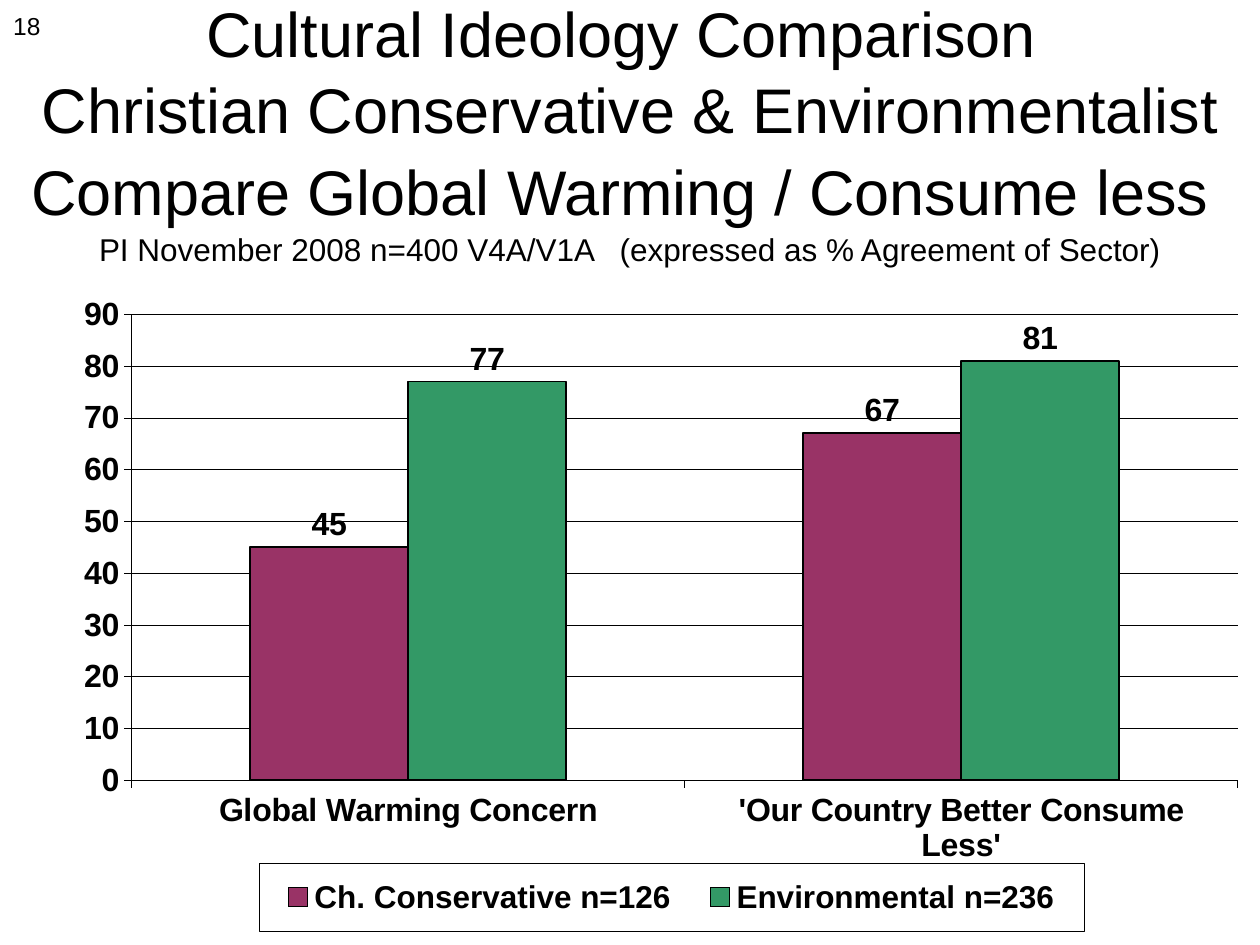
from copy import deepcopy

from lxml import etree
from pptx import Presentation
from pptx.chart.data import CategoryChartData
from pptx.dml.color import RGBColor
from pptx.enum.chart import XL_CHART_TYPE, XL_LABEL_POSITION, XL_LEGEND_POSITION, XL_TICK_MARK
from pptx.enum.text import MSO_ANCHOR, MSO_AUTO_SIZE, PP_ALIGN
from pptx.oxml.ns import qn
from pptx.util import Inches, Pt

CENTER, RIGHT = PP_ALIGN.CENTER, PP_ALIGN.RIGHT
MIDDLE = MSO_ANCHOR.MIDDLE
OUTSIDE = XL_TICK_MARK.OUTSIDE
FONT = "Arial"
COLORS = {"black": "000000", "conservative": "993366", "environmental": "339966"}


def style(font, size, bold=False):
    font.name = FONT
    font.size = Pt(size)
    font.bold = bold
    font.color.rgb = RGBColor.from_string(COLORS["black"])


def set_layout(parent, after, box, inner=False):
    """Place a chart part by fractions of the chart's size."""
    for old in parent.findall(qn("c:layout")):
        parent.remove(old)
    layout = etree.Element(qn("c:layout"))
    manual = etree.SubElement(layout, qn("c:manualLayout"))
    settings = [("layoutTarget", "inner")] if inner else []
    settings += [("xMode", "edge"), ("yMode", "edge"), *zip("xywh", box)]
    for tag, val in settings:
        etree.SubElement(manual, qn(f"c:{tag}")).set("val", str(val))
    if after is None:
        parent.insert(0, layout)
    else:
        after.addnext(layout)


prs = Presentation()
prs.slide_width, prs.slide_height = Inches(10), Inches(7.5)
s = prs.slides.add_slide(prs.slide_layouts[5])

# Title: three large lines and a small source line
sp = s.shapes.title
sp.left, sp.top, sp.width, sp.height = Inches(0), Inches(0), Inches(10), Inches(2.08)
tf = sp.text_frame
tf.word_wrap = True
tf.auto_size = MSO_AUTO_SIZE.NONE
tf.vertical_anchor = MIDDLE
p = tf.paragraphs[0]
p.alignment = CENTER
title_runs = [
    ("Cultural Ideology Comparison ", 36, True),
    ("Christian Conservative & Environmentalist", 36, True),
    ("Compare Global Warming / Consume less", 36, False),
    (" ", 40, True),
    ("PI November 2008 n=400 V4A/V1A   (expressed as % Agreement of Sector)", 18, False),
]
for text, size, line_end in title_runs:
    r = p.add_run()
    r.text = text
    style(r.font, size)
    if line_end:
        p.add_line_break()
        p._p[-1].append(deepcopy(r._r.rPr))  # the break takes the run's size

# Chart
data = CategoryChartData()
data.categories = ["Global Warming Concern", "'Our Country Better Consume Less'"]
data.add_series("Ch. Conservative n=126", (45, 67))
data.add_series("Environmental n=236", (77, 81))
chart = s.shapes.add_chart(
    XL_CHART_TYPE.COLUMN_CLUSTERED,
    Inches(0.37), Inches(2.08), Inches(9.92), Inches(5.39), data,
).chart
chart.has_title = False
style(chart.font, 18.3, True)
set_layout(chart._chartSpace.chart.plotArea, None, (0.068, 0.077, 0.885, 0.686), inner=True)

# Columns and value labels
plot = chart.plots[0]
plot.gap_width = 150
plot.overlap = 0
plot.vary_by_categories = False
for series, name in zip(plot.series, ("conservative", "environmental")):
    series.format.fill.solid()
    series.format.fill.fore_color.rgb = RGBColor.from_string(COLORS[name])
    series.format.line.color.rgb = RGBColor.from_string(COLORS["black"])
    series.format.line.width = Pt(1)
    labels = series.data_labels
    labels.show_value = True
    labels.position = XL_LABEL_POSITION.OUTSIDE_END
    style(labels.font, 18.3, True)

# Axes
axis = chart.value_axis
axis.minimum_scale, axis.maximum_scale, axis.major_unit = 0, 90, 10
axis.has_major_gridlines = True
for ax in (chart.category_axis, axis):
    ax.major_tick_mark = OUTSIDE
    style(ax.tick_labels.font, 18.3, True)
for fmt in (chart.category_axis.format, axis.format, axis.major_gridlines.format):
    fmt.line.color.rgb = RGBColor.from_string(COLORS["black"])
    fmt.line.width = Pt(0.25)

# Framed legend
chart.has_legend = True
legend = chart.legend
legend.position = XL_LEGEND_POSITION.BOTTOM
legend.include_in_layout = False
style(legend.font, 18, True)
el = legend._element
set_layout(el, el.find(qn("c:legendPos")), (0.17, 0.885, 0.66, 0.1))
frame = etree.Element(qn("c:spPr"))
ln = etree.SubElement(frame, qn("a:ln"), w=str(Pt(0.25)))
fill = etree.SubElement(ln, qn("a:solidFill"))
etree.SubElement(fill, qn("a:srgbClr"), val=COLORS["black"])
el.find(qn("c:txPr")).addprevious(frame)

# Slide number
tf = s.shapes.add_textbox(Inches(0), Inches(0.04), Inches(0.42), Inches(0.52)).text_frame
tf.word_wrap = True
p = tf.paragraphs[0]
p.alignment = RIGHT
r = p.add_run()
r.text = "18"
style(r.font, 14)

prs.save("out.pptx")
